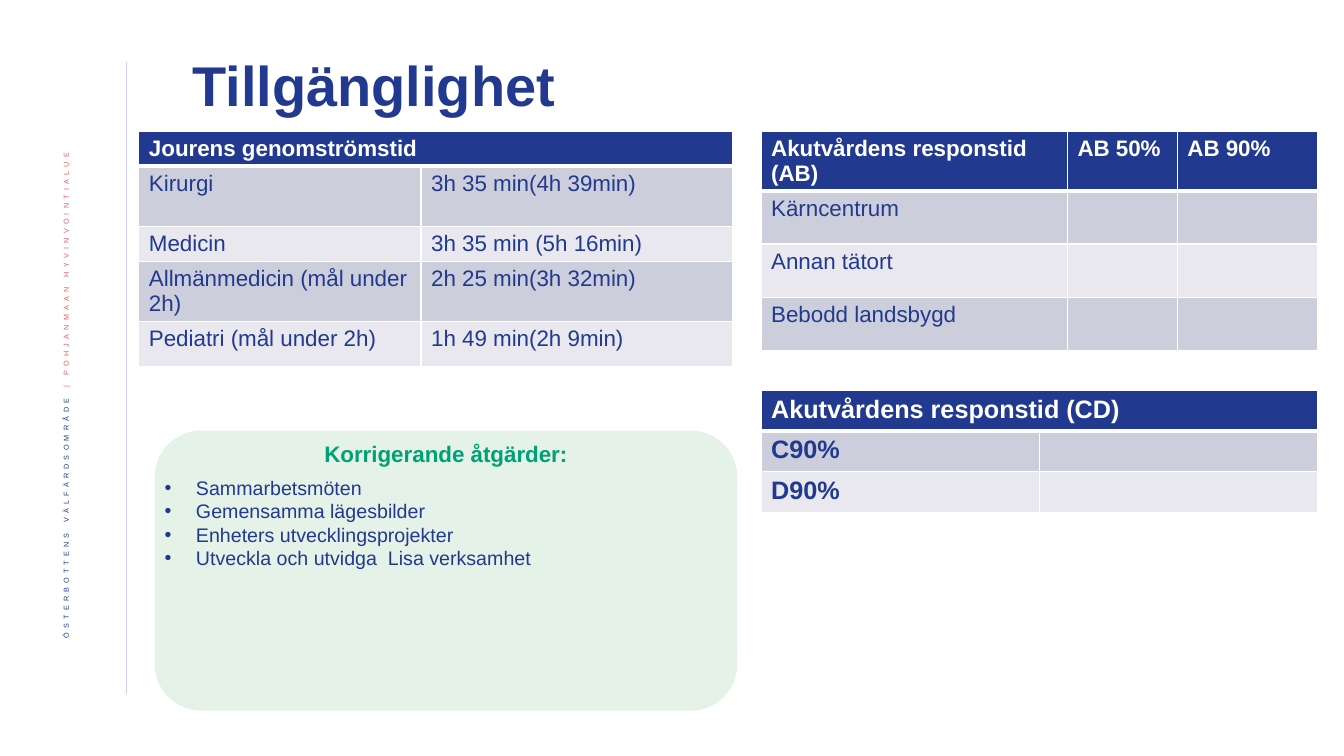
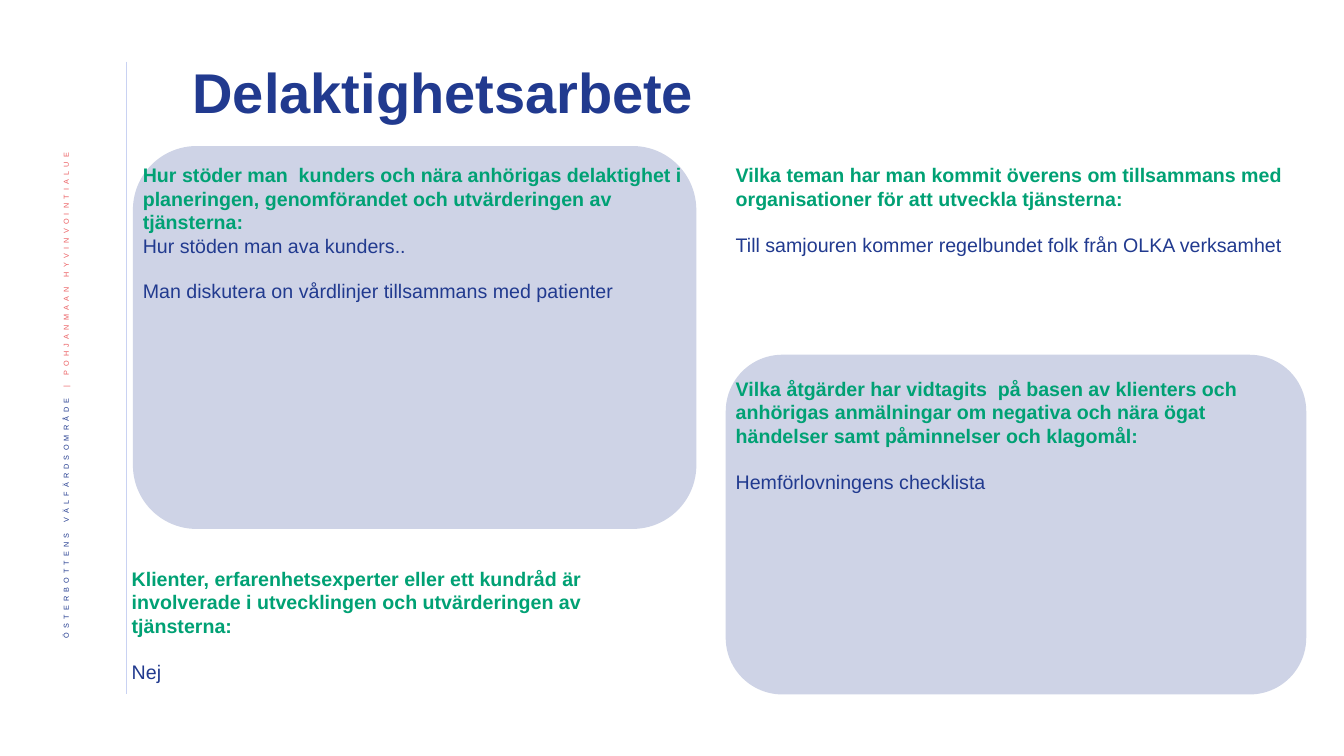
from lxml import etree
from pptx import Presentation
from pptx.dml.color import RGBColor
from pptx.enum.shapes import MSO_CONNECTOR, MSO_SHAPE
from pptx.enum.text import MSO_ANCHOR, MSO_AUTO_SIZE, PP_ALIGN
from pptx.oxml.ns import qn
from pptx.util import Cm, Pt

STRAIGHT = MSO_CONNECTOR.STRAIGHT
ROUNDED = MSO_SHAPE.ROUNDED_RECTANGLE
MIDDLE = MSO_ANCHOR.MIDDLE
NO_FIT = MSO_AUTO_SIZE.NONE
LEFT, CENTER, RIGHT = PP_ALIGN.LEFT, PP_ALIGN.CENTER, PP_ALIGN.RIGHT

# Shared palette and text styles
NAVY, GREEN, CORAL, WHITE = "213A8F", "00A174", "EB5C5F", "FFFFFF"
RULE, MINT = "C9D2F2", "85C598"
BANDS = ("CDCEDB", "E8E8EE")
FONT = "Arial"
TITLE = {"size": Pt(40), "bold": True}
HEADING = {"size": Pt(14), "bold": True}
BODY = {"size": Pt(14), "bold": False}
SIDE_LABEL = {"size": Pt(9), "bold": False}
BLANK_LINE = Pt(16)


def color(hex_value):
    return RGBColor.from_string(hex_value)


def apply(target, formats):
    for name, value in formats.items():
        setattr(target, name, value)


def write(paragraph, text, formats, ink, **spacing):
    """Add one formatted run and set the paragraph's spacing."""
    apply(paragraph, spacing)
    run = paragraph.add_run()
    run.text = text
    apply(run.font, {"name": FONT, **formats})
    run.font.color.rgb = color(ink)
    return run


def add_text_area(slide, box):
    frame = slide.shapes.add_textbox(*map(Cm, box)).text_frame
    frame.word_wrap = True
    return frame


def add_panel(slide, box, tint):
    """Rounded panel with a translucent fill and no outline."""
    panel = slide.shapes.add_shape(ROUNDED, *map(Cm, box))
    panel.shadow.inherit = False
    panel.fill.solid()
    panel.fill.fore_color.rgb = color(tint)
    panel.line.fill.background()
    tint_element = panel._element.spPr.find(".//" + qn("a:srgbClr"))
    etree.SubElement(tint_element, qn("a:alpha"), val="22000")


def add_sidebar(slide):
    """Vertical rule and organisation name shared by all slides."""
    rule = slide.shapes.add_connector(
        STRAIGHT, Cm(3.18), Cm(1.55), Cm(3.18), Cm(17.48))
    rule.line.color.rgb = color(RULE)
    rule.line.width = Pt(0.5)
    etree.SubElement(rule._element.spPr, qn("a:effectLst"))

    frame = add_text_area(slide, (1.07, 3.61, 1.32, 14.55))
    frame.vertical_anchor = MIDDLE
    frame._txBody.bodyPr.set("vert", "vert270")
    for text, ink in (("ÖSTERBOTTENS VÄLFÄRDSOMRÅDE ", NAVY),
                      ("| POHJANMAAN HYVINVOINTIALUE", CORAL)):
        run = write(frame.paragraphs[0], text, SIDE_LABEL, ink,
                    alignment=RIGHT, line_spacing=0.9)
        properties = run._r.get_or_add_rPr()
        properties.set("baseline", "30000")
        properties.set("spc", "300")


def add_titled_slide(deck, text, box):
    slide = deck.slides.add_slide(deck.slide_layouts[5])
    add_sidebar(slide)
    title = slide.shapes.title
    apply(title, dict(zip(("left", "top", "width", "height"), map(Cm, box))))
    apply(title.text_frame, {"vertical_anchor": MIDDLE, "word_wrap": True,
                             "auto_size": NO_FIT})
    write(title.text_frame.paragraphs[0], text, TITLE, NAVY,
          alignment=LEFT, line_spacing=0.9)
    return slide


def set_borders(cell, top, bottom):
    """White cell borders; widths in points."""
    properties = cell._tc.get_or_add_tcPr()
    sides = (("lnL", 1), ("lnR", 1), ("lnT", top), ("lnB", bottom))
    for position, (side, width) in enumerate(sides):
        border = etree.Element(qn("a:" + side), w=str(Pt(width)))
        fill = etree.SubElement(border, qn("a:solidFill"))
        etree.SubElement(fill, qn("a:srgbClr"), val=WHITE)
        properties.insert(position, border)


def add_times_table(slide, corner, widths, heights, rows, size=16,
                    bold_body=False):
    """Banded table; a lone header text spans the full width."""
    left, top = corner
    table = slide.shapes.add_table(
        len(heights), len(widths), Cm(left), Cm(top),
        Cm(sum(widths)), Cm(sum(heights))).table
    for column, width in zip(table.columns, widths):
        column.width = Cm(width)
    for row, height in zip(table.rows, heights):
        row.height = Cm(height)
    if len(rows[0]) == 1:
        table.cell(0, 0).merge(table.cell(0, len(widths) - 1))

    for r, texts in enumerate(rows):
        header = r == 0
        for c in range(len(widths)):
            cell = table.cell(r, c)
            cell.fill.solid()
            cell.fill.fore_color.rgb = color(
                NAVY if header else BANDS[(r - 1) % 2])
            set_borders(cell, 3 if r == 1 else 1, 3 if header else 1)
            if c < len(texts):
                write(cell.text_frame.paragraphs[0], texts[c],
                      {"size": Pt(size), "bold": header or bold_body},
                      WHITE if header else NAVY)


def add_actions(slide, box, heading, actions):
    """Panel with a centred heading and a bullet list."""
    left, top, width, height = box
    add_panel(slide, box, MINT)
    frame = add_text_area(slide, (left, top + 0.12, width, height - 2.75))
    write(frame.paragraphs[0], heading, {"size": Pt(16), "bold": True}, GREEN,
          alignment=CENTER, space_after=Pt(6))
    for action in actions:
        paragraph = frame.add_paragraph()
        properties = paragraph._p.get_or_add_pPr()
        properties.set("marL", str(Cm(0.79)))
        properties.set("indent", str(-Cm(0.79)))
        etree.SubElement(properties, qn("a:buFont"), typeface=FONT)
        etree.SubElement(properties, qn("a:buChar"), char="•")
        write(paragraph, action, BODY, NAVY)


def add_question(slide, box, question, answers, panel_inset=None):
    """Question with answers given as (text, space before) pairs."""
    left, top, width, height = box
    if panel_inset is not None:
        add_panel(slide, box, NAVY)
        top, height = top + panel_inset, height - panel_inset
    frame = add_text_area(slide, (left, top, width, height))
    write(frame.paragraphs[0], question, HEADING, GREEN)
    for answer, gap in answers:
        write(frame.add_paragraph(), answer, BODY, NAVY, space_before=gap)


def build_availability(deck):
    slide = add_titled_slide(deck, "Tillgänglighet", (4.6, 1.14, 27.89, 2.16))
    table_top, right_column = 3.3, 19.18
    add_times_table(
        slide, (3.5, table_top), (7.11, 7.85), (0.86, 1.52, 0.89, 1.5, 1.14),
        [["Jourens genomströmstid"],
         ["Kirurgi", "3h 35 min(4h 39min)"],
         ["Medicin", "3h 35 min (5h 16min)"],
         ["Allmänmedicin (mål under 2h)", "2h 25 min(3h 32min)"],
         ["Pediatri (mål under 2h)", "1h 49 min(2h 9min)"]])
    add_times_table(
        slide, (right_column, table_top), (7.72, 2.77, 3.53),
        (1.5, 1.34, 1.34, 1.34),
        [["Akutvårdens responstid (AB)", "AB 50%", "AB 90%"],
         ["Kärncentrum"], ["Annan tätort"], ["Bebodd landsbygd"]])
    add_times_table(
        slide, (right_column, 9.83), (7.01, 7.01), (1.03, 1.03, 1.03),
        [["Akutvårdens responstid (CD)"], ["C90%"], ["D90%"]],
        size=18, bold_body=True)
    add_actions(
        slide, (3.9, 10.85, 14.68, 7.06), "Korrigerande åtgärder:",
        ["Sammarbetsmöten", "Gemensamma lägesbilder",
         "Enheters utvecklingsprojekter",
         "Utveckla och utvidga  Lisa verksamhet"])


def build_participation(deck):
    slide = add_titled_slide(
        deck, "Delaktighetsarbete", (4.6, 1.14, 25.35, 2.51))
    right_column, right_width, left_width = 18.29, 14.63, 14.2
    add_question(
        slide, (3.35, 3.68, left_width, 9.65),
        "Hur stöder man  kunders och nära anhörigas delaktighet i "
        "planeringen, genomförandet och utvärderingen av tjänsterna:",
        [("Hur stöden man ava kunders..", Pt(0)),
         ("Man diskutera on vårdlinjer tillsammans med patienter",
          BLANK_LINE)],
        panel_inset=0.3)
    add_question(
        slide, (right_column, 3.99, right_width, 3.25),
        "Vilka teman har man kommit överens om tillsammans med "
        "organisationer för att utveckla tjänsterna:",
        [("Till samjouren kommer regelbundet folk från OLKA verksamhet",
          BLANK_LINE)])
    add_question(
        slide, (3.07, 14.15, left_width, 3.25),
        "Klienter, erfarenhetsexperter eller ett kundråd är involverade i "
        "utvecklingen och utvärderingen av tjänsterna:",
        [("Nej", BLANK_LINE)])
    add_question(
        slide, (right_column, 8.94, right_width, 8.56),
        "Vilka åtgärder har vidtagits  på basen av klienters och anhörigas "
        "anmälningar om negativa och nära ögat händelser samt påminnelser "
        "och klagomål:",
        [("Hemförlovningens checklista", BLANK_LINE)],
        panel_inset=0.43)


def main():
    deck = Presentation()
    deck.slide_width, deck.slide_height = Cm(33.87), Cm(19.05)
    build_availability(deck)
    build_participation(deck)
    deck.save("out.pptx")


if __name__ == "__main__":
    main()
